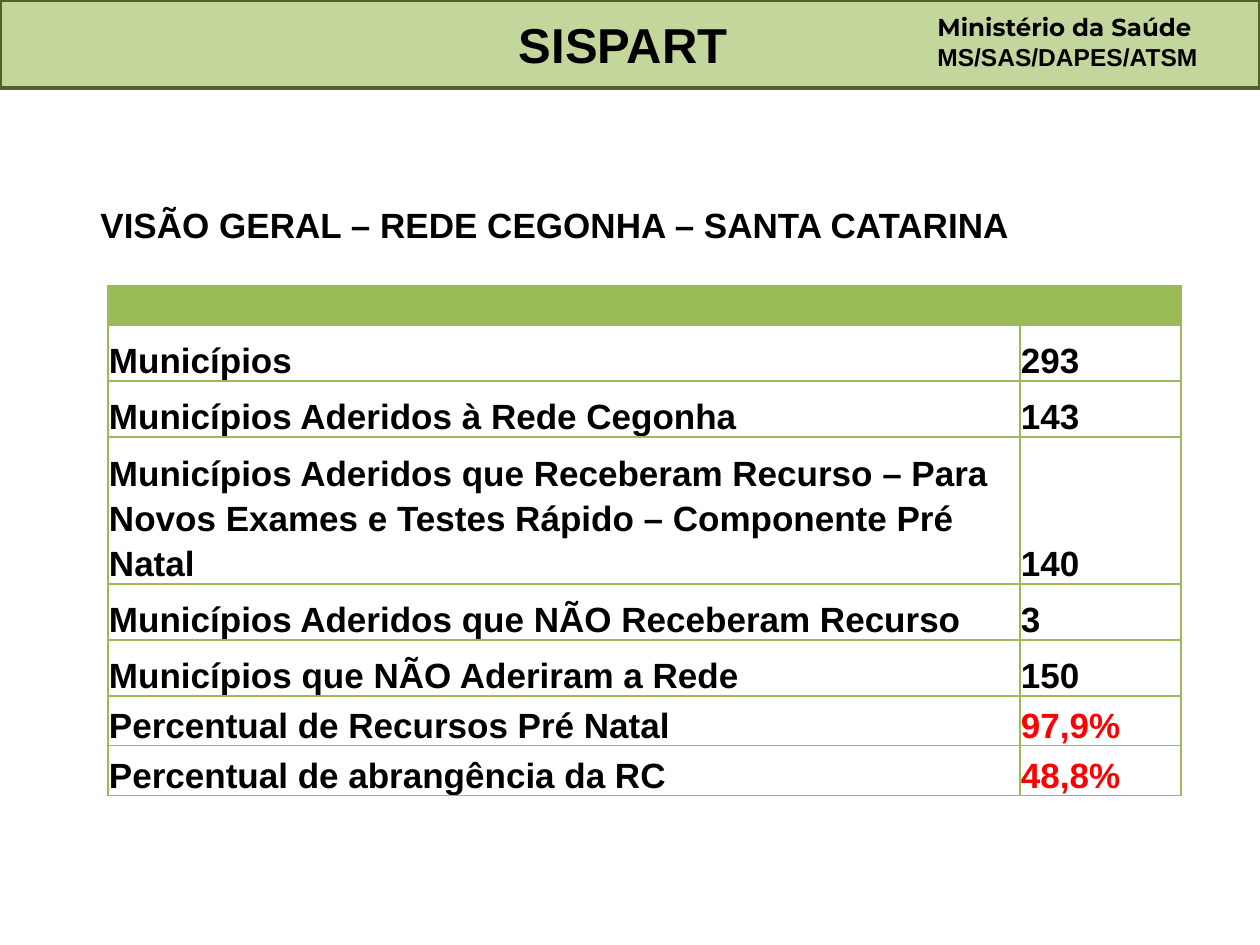
from lxml.etree import SubElement
from pptx import Presentation
from pptx.dml.color import RGBColor
from pptx.enum.text import MSO_ANCHOR, MSO_AUTO_SIZE, PP_ALIGN
from pptx.oxml.ns import qn
from pptx.util import Emu, Pt

EMU_PER_PX = 914400 / 126
SLIDE_SIZE = (1260, 945)
COLORS = {
    "banner": "C3D69B",
    "banner_line": "4F6228",
    "table": "9BBB59",
    "text": "000000",
    "highlight": "FF0000",
}

TITLE = "SISPART "
TITLE_BOX = (0, 0, 1260, 88)
AGENCY = [("Ministério da Saúde", "Montserrat"), ("MS/SAS/DAPES/ATSM", "Arial")]
AGENCY_BOX = (925, 6, 295, 72)
HEADING = [("VISÃO GERAL – REDE CEGONHA – SANTA CATARINA", "Arial")]
HEADING_BOX = (88, 197, 1102, 55)

TABLE_ORIGIN = (108, 286)
COLUMN_WIDTHS = (912, 161)
HEADER_HEIGHT = 39
# label, value, value colour, row height
ROWS = [
    ("Municípios", "293", "text", 56),
    ("Municípios Aderidos à Rede Cegonha", "143", "text", 56),
    ("Municípios Aderidos que Receberam Recurso – Para Novos Exames e Testes "
     "Rápido – Componente Pré Natal", "140", "text", 147),
    ("Municípios Aderidos que NÃO Receberam Recurso", "3", "text", 56),
    ("Municípios que NÃO Aderiram a Rede", "150", "text", 56),
    ("Percentual de Recursos Pré Natal", "97,9%", "highlight", 50),
    ("Percentual de abrangência da RC", "48,8%", "highlight", 50),
]


def px(length):
    return Emu(round(length * EMU_PER_PX))


def rgb(name):
    return RGBColor.from_string(COLORS[name])


def add_run(paragraph, text, size, font="Arial", color="text"):
    run = paragraph.add_run()
    run.text = text
    run.font.name = font
    run.font.size = Pt(size)
    run.font.bold = True
    run.font.color.rgb = rgb(color)


def add_banner(slide):
    banner = slide.shapes.title
    banner.left, banner.top, banner.width, banner.height = map(px, TITLE_BOX)
    banner.fill.solid()
    banner.fill.fore_color.rgb = rgb("banner")
    banner.line.color.rgb = rgb("banner_line")
    banner.line.width = Pt(2)
    frame = banner.text_frame
    frame.auto_size = MSO_AUTO_SIZE.NONE
    frame.vertical_anchor = MSO_ANCHOR.MIDDLE
    frame.paragraphs[0].alignment = PP_ALIGN.CENTER
    add_run(frame.paragraphs[0], TITLE, 28)


def add_text(slide, box, lines, size):
    frame = slide.shapes.add_textbox(*map(px, box)).text_frame
    frame.word_wrap = True
    frame.auto_size = MSO_AUTO_SIZE.SHAPE_TO_FIT_TEXT
    for index, (text, font) in enumerate(lines):
        paragraph = frame.add_paragraph() if index else frame.paragraphs[0]
        add_run(paragraph, text, size, font)


def add_borders(cell):
    properties = cell._tc.get_or_add_tcPr()
    for side in ("a:lnL", "a:lnR", "a:lnT", "a:lnB"):
        line = SubElement(properties, qn(side), w=str(Pt(1)))
        fill = SubElement(line, qn("a:solidFill"))
        SubElement(fill, qn("a:srgbClr"), val=COLORS["table"])


def fill_cell(cell, text, color):
    cell.fill.background()
    paragraph = cell.text_frame.paragraphs[0]
    paragraph.line_spacing = 1.15
    paragraph.space_after = Pt(10)
    add_run(paragraph, text, 20, color=color)


def add_summary_table(slide):
    heights = [HEADER_HEIGHT] + [row[-1] for row in ROWS]
    size = (sum(COLUMN_WIDTHS), sum(heights))
    table = slide.shapes.add_table(
        len(heights), len(COLUMN_WIDTHS), *map(px, TABLE_ORIGIN + size)).table
    table.first_row = table.horz_banding = False
    for column, width in zip(table.columns, COLUMN_WIDTHS):
        column.width = px(width)
    for row, height in zip(table.rows, heights):
        row.height = px(height)
    for cell in table.iter_cells():
        cell.margin_left = cell.margin_right = cell.margin_top = px(1)
        cell.margin_bottom = 0
        cell.vertical_anchor = MSO_ANCHOR.BOTTOM
        add_borders(cell)
    for cell in table.rows[0].cells:
        cell.fill.solid()
        cell.fill.fore_color.rgb = rgb("table")
    for index, (label, value, color, _) in enumerate(ROWS, start=1):
        fill_cell(table.cell(index, 0), label, "text")
        fill_cell(table.cell(index, 1), value, color)


def main():
    presentation = Presentation()
    presentation.slide_width, presentation.slide_height = map(px, SLIDE_SIZE)
    slide = presentation.slides.add_slide(presentation.slide_layouts[5])
    add_banner(slide)
    add_text(slide, AGENCY_BOX, AGENCY, 14)
    add_summary_table(slide)
    add_text(slide, HEADING_BOX, HEADING, 20)
    presentation.save("out.pptx")


if __name__ == "__main__":
    main()
